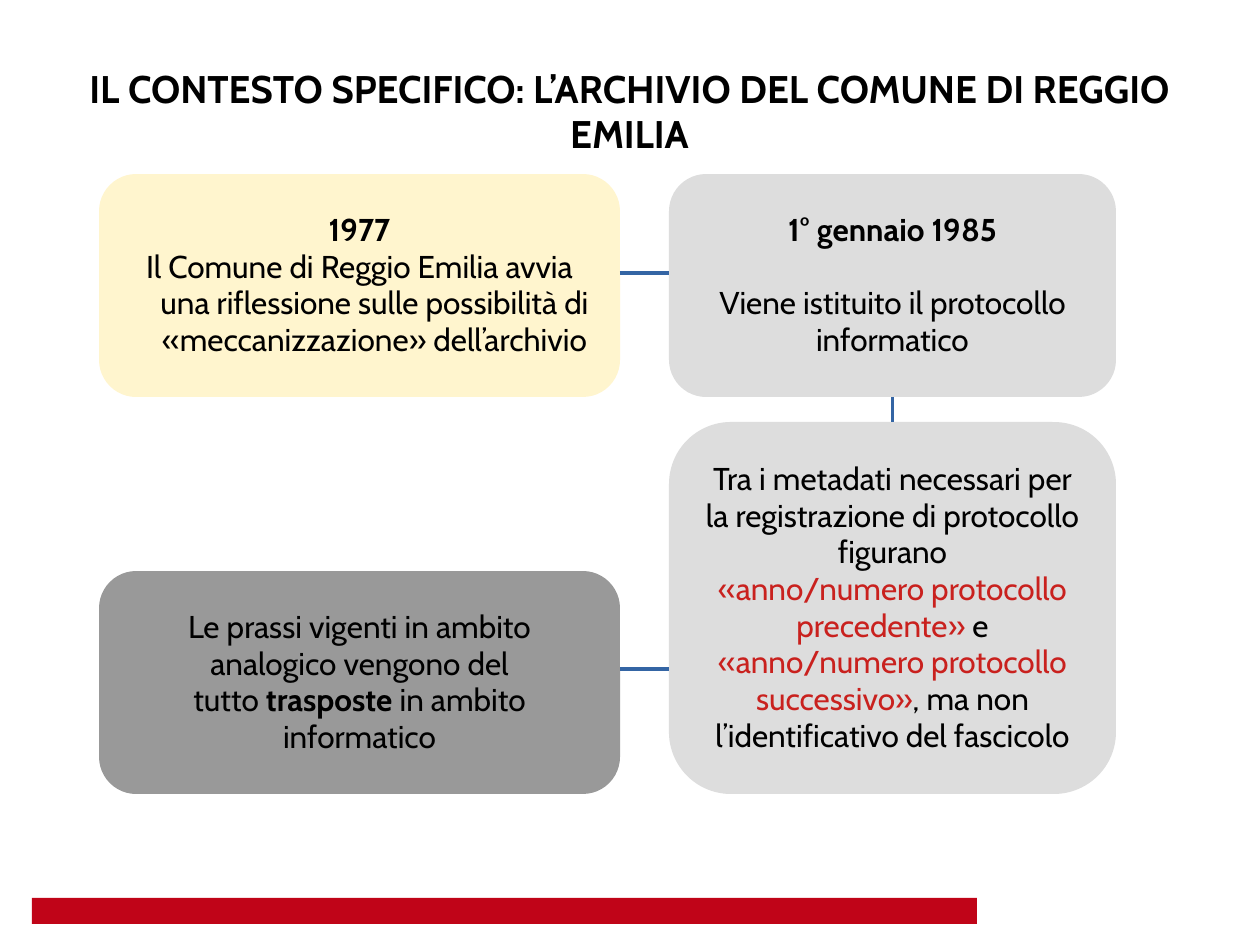
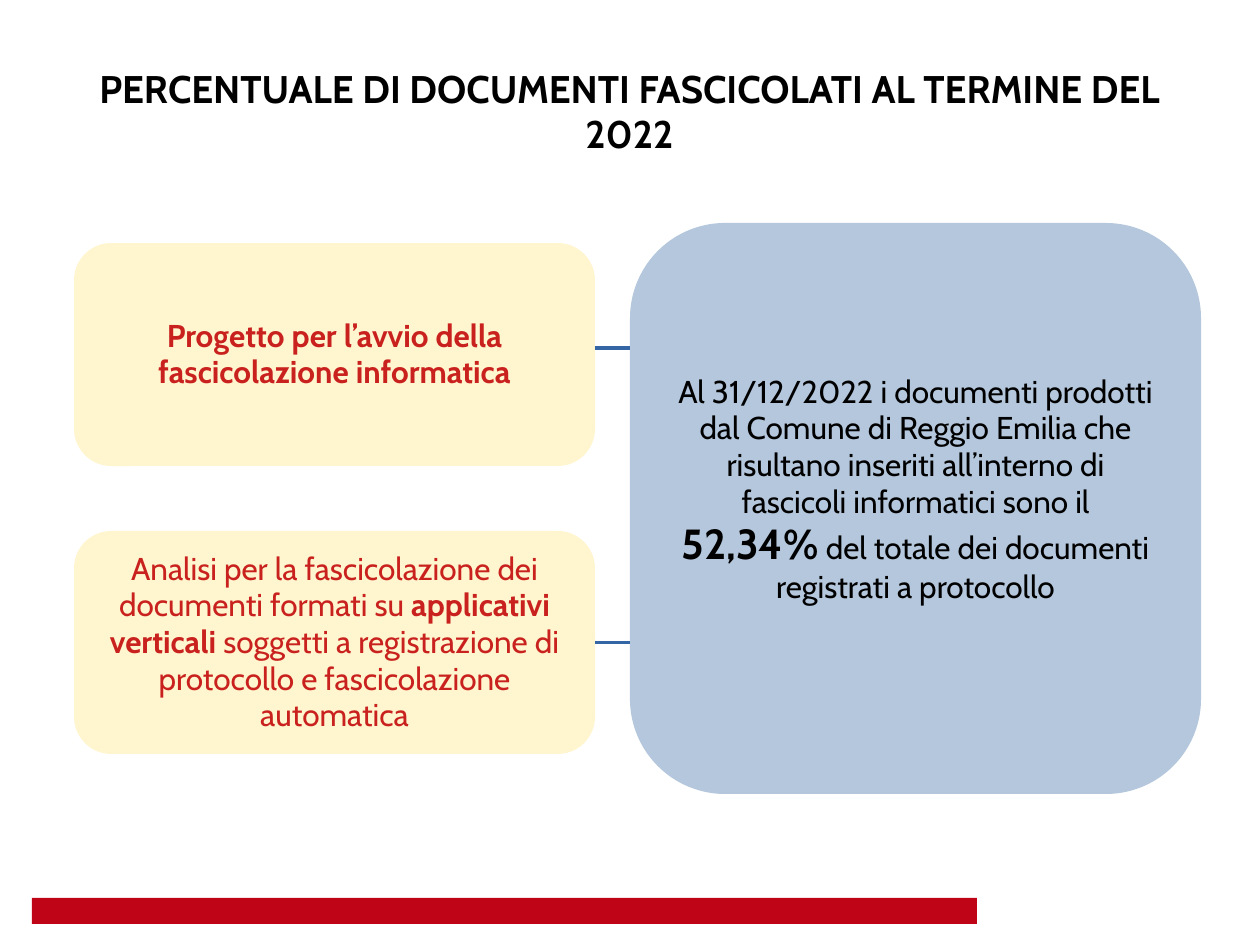
import pptx
import pptx.util
import pptx.dml.color
import pptx.enum.shapes
import pptx.enum.text
from dataclasses import dataclass
from lxml import etree


@dataclass(frozen=True)
class Theme:
    font: str = "Cabin"
    head: int = 22
    body: int = 18
    big: int = 24
    ink: str = "000000"
    red: str = "C9211E"
    bar: str = "C00418"
    line: str = "3465A4"
    cream: str = "FFF5CE"
    pale: str = "DDDDDD"
    gray: str = "999999"
    blue: str = "B4C7DC"


look = Theme()
kinds = pptx.enum.shapes.MSO_SHAPE
rgb = pptx.dml.color.RGBColor.from_string
Pt = pptx.util.Pt


def px(n):
    return round(n * 914400 / 126)


def write(frame, paras, size, pad):
    """Fill a frame; each paragraph is a list of (text, colour, bold, size) runs."""
    frame.word_wrap = True
    frame.margin_left, frame.margin_top, frame.margin_right, frame.margin_bottom = map(px, pad)
    for i, runs in enumerate(paras):
        para = frame.paragraphs[0] if i == 0 else frame.add_paragraph()
        para.alignment = pptx.enum.text.PP_ALIGN.CENTER
        para.line_spacing = 0.97
        para.font.name = look.font
        runs = [(*run, size)[:4] for run in runs]
        same = len({run[1:] for run in runs}) == 1
        for text, tone, bold, pts in runs:
            run = para.add_run()
            run.text = text
            font = para.font if same else run.font
            font.size, font.bold = Pt(pts), bold
            font.color.rgb = rgb(tone)


# Content: boxes are (name, left, top, width, height, fill, paragraphs)
ink, red = look.ink, look.red
left, right, high = 99, 669, 223
pages = [
    ("IL CONTESTO SPECIFICO: L’ARCHIVIO DEL COMUNE DI REGGIO EMILIA", [
        ("start", left, 174, 521, high, look.cream, [
            [("1977", ink, True)],
            [("Il Comune di Reggio Emilia avvia una riflessione sulle possibilità di "
              "«meccanizzazione» dell’archivio", ink, False)]]),
        ("digital", right, 174, 447, high, look.pale, [
            [("1° gennaio 1985", ink, True)],
            [("Viene istituito il protocollo informatico", ink, False)]]),
        ("fields", right, 422, 447, 372, look.pale, [
            [("Tra i metadati necessari per la registrazione di protocollo figurano", ink, False)],
            [("«anno/numero protocollo precedente»", red, False),
             (" e ", ink, False),
             ("«anno/numero protocollo successivo»", red, False),
             (", ma non l’identificativo del fascicolo", ink, False)]]),
        ("habits", left, 571, 521, high, look.gray, [
            [("Le prassi vigenti in ambito analogico vengono del", ink, False)],
            [("tutto ", ink, False), ("trasposte", ink, True),
             (" in ambito informatico", ink, False)]]),
    ], [
        # Lines: two ends, then the joined boxes with their side numbers
        (620, 273, 669, 273, None, None),
        (892, 397, 892, 422, ("digital", 2), ("fields", 0)),
        (669, 669, 620, 669, None, None),
    ]),
    ("PERCENTUALE DI DOCUMENTI FASCICOLATI AL TERMINE DEL 2022", [
        ("share", 630, 223, 571, 571, look.blue, [
            [("Al 31/12/2022 i documenti prodotti dal Comune di Reggio Emilia che risultano "
              "inseriti all’interno di fascicoli informatici sono il ", ink, False),
             ("52,34%", ink, True, look.big),
             (" del totale dei documenti registrati a protocollo", ink, False)]]),
        ("project", 74, 243, 521, high, look.cream, [
            [("Progetto per l’avvio della fascicolazione informatica", red, True)]]),
        ("study", 74, 531, 521, high, look.cream, [
            [("Analisi per la fascicolazione dei documenti formati su ", red, False),
             ("applicativi verticali", red, True),
             (" soggetti a registrazione di protocollo e fascicolazione automatica", red, False)]]),
    ], [
        (595, 348, 630, 348, None, None),
        (595, 643, 630, 643, ("study", 3), None),
    ]),
]

deck = pptx.Presentation()
deck.slide_width, deck.slide_height = px(1260), px(945)

for title, boxes, lines in pages:
    slide = deck.slides.add_slide(deck.slide_layouts[6])
    shapes = slide.shapes

    # Red band and title
    band = shapes.add_shape(kinds.RECTANGLE, *map(px, (32, 898, 945, 26)))
    band.shadow.inherit = False
    band.fill.solid()
    band.fill.fore_color.rgb = rgb(look.bar)
    band.line.fill.background()
    head = shapes.add_textbox(*map(px, (43, 60, 1173, 60)))
    write(head.text_frame, [[(title, ink, True)]], look.head, (13, 8, 13, 6))

    # Rounded boxes
    made = {}
    for name, x, y, wide, tall, fill, paras in boxes:
        box = shapes.add_shape(kinds.ROUNDED_RECTANGLE, *map(px, (x, y, wide, tall)))
        box.shadow.inherit = False
        box.fill.solid()
        box.fill.fore_color.rgb = rgb(fill)
        box.line.fill.background()
        frame = box.text_frame
        frame.vertical_anchor = pptx.enum.text.MSO_ANCHOR.MIDDLE
        pad = (15, 9, 15, 46) if name == "share" else (13, 6, 13, 6)
        write(frame, paras, look.body, pad)
        made[name] = box

    # Hanging indent under the year, gap under the date
    if "start" in made:
        for para in made["start"].text_frame.paragraphs:
            props = para._p.get_or_add_pPr()
            props.set("marL", str(px(30)))
            props.set("indent", str(px(-30)))
        made["digital"].text_frame.paragraphs[1].space_before = Pt(21)

    # Connecting lines
    for x1, y1, x2, y2, start, end in lines:
        link = shapes.add_connector(
            pptx.enum.shapes.MSO_CONNECTOR.STRAIGHT, *map(px, (x1, y1, x2, y2)))
        link.line.color.rgb = rgb(look.line)
        link.line.width = Pt(0)
        etree.SubElement(link._element.spPr, pptx.oxml.ns.qn("a:effectLst"))
        if start:
            link.begin_connect(made[start[0]], start[1])
            link.end_y = link.begin_y if y1 == y2 else px(y2)
        if end:
            link.end_connect(made[end[0]], end[1])

deck.save("out.pptx")
